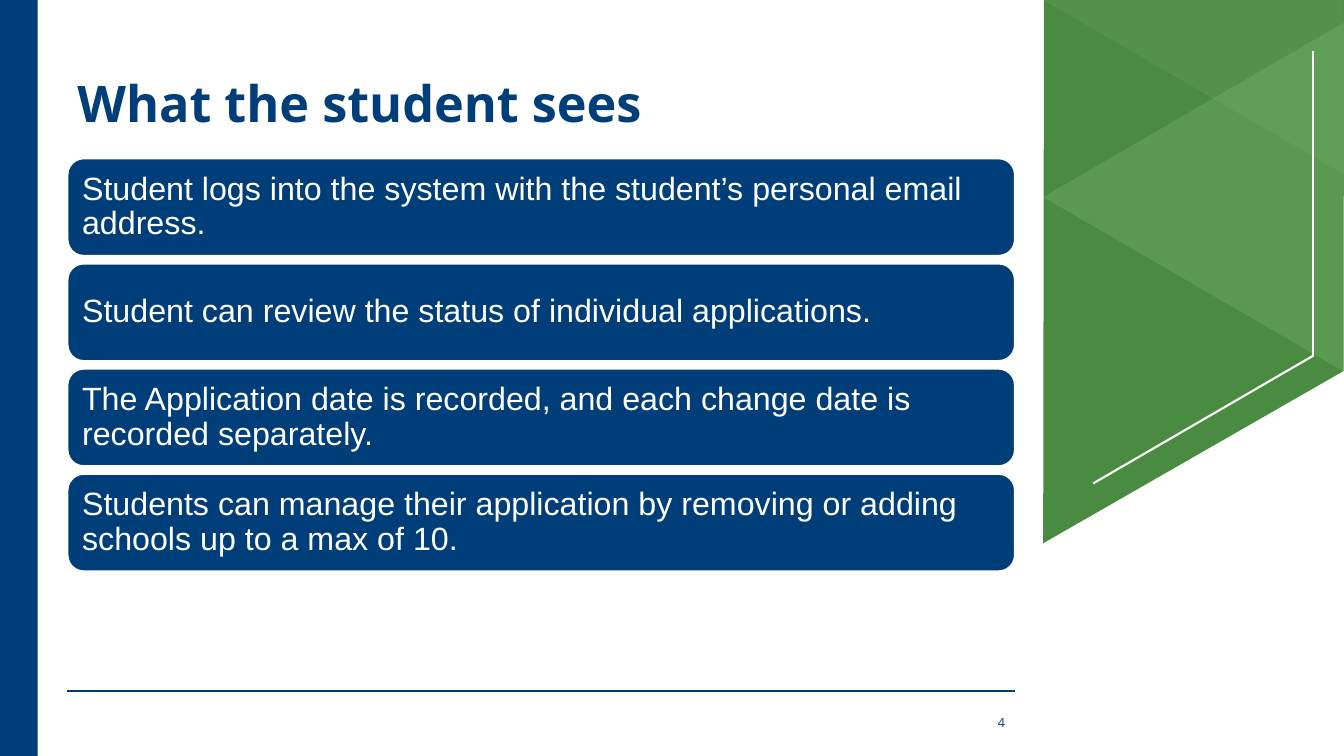
"""Build the slide "What the student sees" with four statement bars."""
from dataclasses import dataclass

from lxml import etree
from pptx import Presentation
from pptx.dml.color import RGBColor
from pptx.enum.shapes import MSO_CONNECTOR, MSO_SHAPE
from pptx.enum.text import MSO_ANCHOR, PP_ALIGN
from pptx.oxml.ns import qn
from pptx.util import Cm, Pt


@dataclass(frozen=True)
class Theme:
    navy: RGBColor = RGBColor(0x00, 0x3E, 0x79)
    green: RGBColor = RGBColor(0x49, 0x8B, 0x40)
    light_green: RGBColor = RGBColor(0x89, 0xC5, 0x81)
    white: RGBColor = RGBColor(0xFF, 0xFF, 0xFF)
    heading_font: str = "Open Sans"
    body_font: str = "Arial"
    title_size: Pt = Pt(36)
    body_size: Pt = Pt(23)
    number_size: Pt = Pt(9)
    line_width: Pt = Pt(1.5)


theme = Theme()


def paint(shape, color, opacity=100):
    shape.shadow.inherit = False
    shape.line.fill.background()
    shape.fill.solid()
    shape.fill.fore_color.rgb = color
    if opacity < 100:
        color_element = shape.fill._xPr.find(qn("a:solidFill"))[0]
        etree.SubElement(color_element, qn("a:alpha"), val=str(opacity * 1000))


def write(shape, text, font_name, size, color, bold=False,
          align=PP_ALIGN.LEFT, anchor=MSO_ANCHOR.MIDDLE):
    frame = shape.text_frame
    frame.word_wrap = True
    frame.vertical_anchor = anchor
    paragraph = frame.paragraphs[0]
    paragraph.alignment = align
    run = paragraph.add_run()
    run.text = text
    run.font.name = font_name
    run.font.size = size
    run.font.bold = bold
    run.font.color.rgb = color
    return paragraph


presentation = Presentation()
presentation.slide_width = Cm(33.87)
presentation.slide_height = Cm(19.05)
slide = presentation.slides.add_slide(presentation.slide_layouts[6])
shapes = slide.shapes

left, content_width = 1.7, 23.88
right = left + content_width

panel_points = [(26.31, -0.05), (33.87, -0.03), (33.86, 9.35), (26.29, 13.69)]
corner_points = [(26.29, 0), (33.86, 0), (33.86, 4.39)]
facets = []
for points in (panel_points, corner_points):
    (start_x, start_y), *others = points
    builder = shapes.build_freeform(Cm(start_x), Cm(start_y))
    builder.add_line_segments([(Cm(x), Cm(y)) for x, y in others], close=True)
    facets.append(builder.convert_to_shape())
panel, corner = facets
paint(panel, theme.green)
paint(corner, theme.light_green, 15)

triangle = shapes.add_shape(MSO_SHAPE.ISOSCELES_TRIANGLE,
                            Cm(25.68), Cm(1.17), Cm(8.81), Cm(7.59))
triangle.rotation = 270
triangle.adjustments[0] = 0.5
paint(triangle, theme.light_green, 25)

side_band = shapes.add_shape(MSO_SHAPE.RECTANGLE, Cm(0), Cm(0),
                             Cm(0.95), presentation.slide_height)
paint(side_band, theme.navy)

rules = [
    (left, 17.42, right, 17.42, theme.navy),
    (27.55, 12.18, 33.1, 8.96, theme.white),
    (33.1, 1.28, 33.1, 8.96, theme.white),
]
for x1, y1, x2, y2, color in rules:
    rule = shapes.add_connector(MSO_CONNECTOR.STRAIGHT,
                                Cm(x1), Cm(y1), Cm(x2), Cm(y2))
    rule.line.color.rgb = color
    rule.line.width = theme.line_width
    etree.SubElement(rule._element.spPr, qn("a:effectLst"))

title = shapes.add_textbox(Cm(left), Cm(1.7), Cm(content_width), Cm(2))
write(title, "What the student sees", theme.heading_font, theme.title_size,
      theme.navy, bold=True, anchor=MSO_ANCHOR.TOP)

page_number = shapes.add_textbox(Cm(23.67), Cm(17.7), Cm(1.91), Cm(1.02))
write(page_number, "4", theme.heading_font, theme.number_size, theme.navy,
      align=PP_ALIGN.RIGHT)

statements = [
    "Student logs into the system with the student’s personal email address.",
    "Student can review the status of individual applications.",
    "The Application date is recorded, and each change date is recorded separately.",
    "Students can manage their application by removing or adding schools up to a max of 10.",
]
bar_top, bar_height, bar_pitch = 3.99, 2.46, 2.65
for index, statement in enumerate(statements):
    bar = shapes.add_shape(MSO_SHAPE.ROUNDED_RECTANGLE, Cm(left),
                           Cm(bar_top + index * bar_pitch),
                           Cm(content_width), Cm(bar_height))
    paint(bar, theme.navy)
    bar.line.color.rgb = theme.white
    bar.line.width = theme.line_width
    paragraph = write(bar, statement, theme.body_font, theme.body_size, theme.white)
    paragraph.line_spacing = 0.9

presentation.save("out.pptx")
